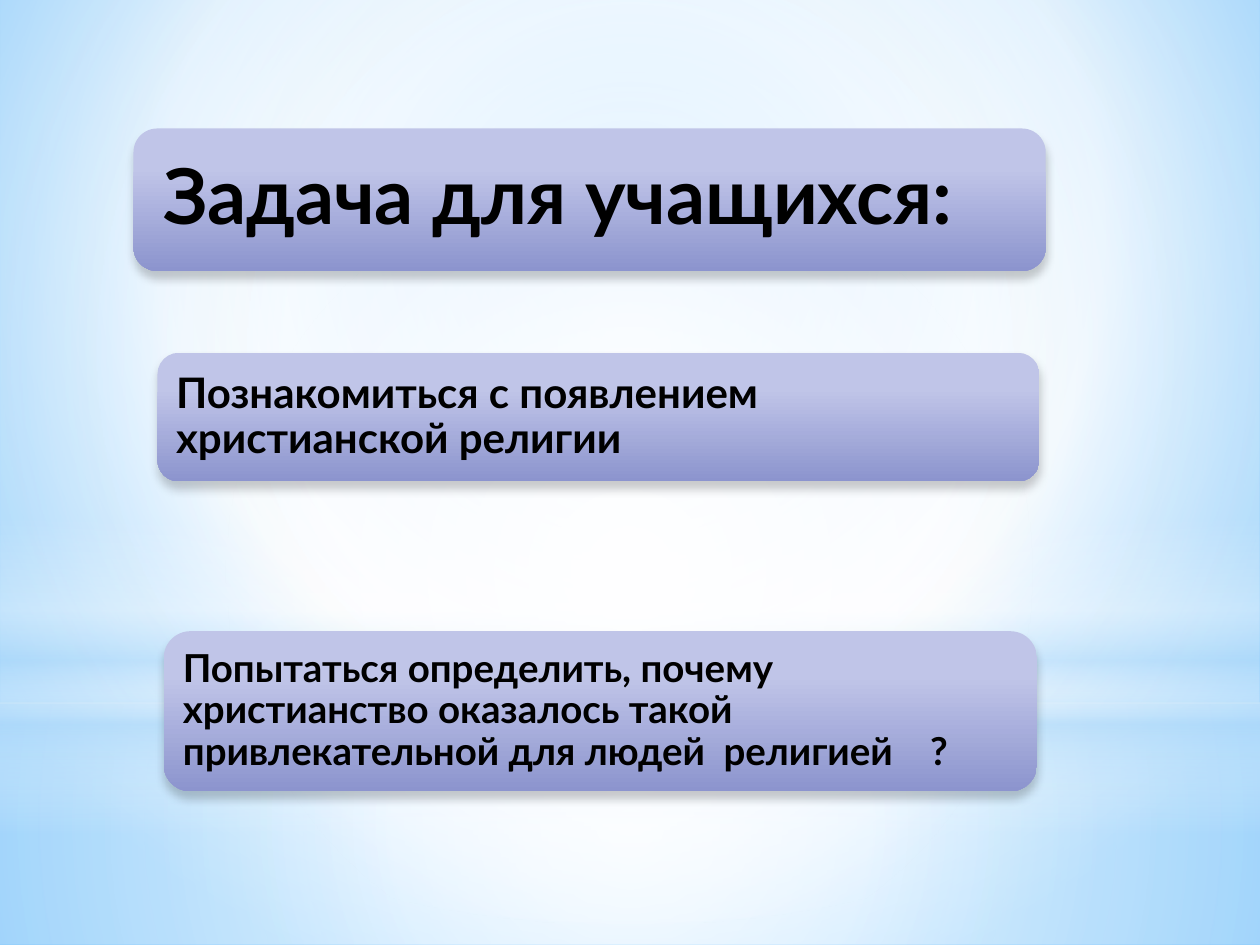
"""Build the slide that sets the pupils' tasks."""
from dataclasses import dataclass
from typing import Any

import lxml.etree
import pptx
import pptx.dml.color
import pptx.enum.shapes
import pptx.enum.text
import pptx.oxml.ns
import pptx.util

Inches = pptx.util.Inches
Shapes = pptx.enum.shapes.MSO_SHAPE
qn = pptx.oxml.ns.qn


@dataclass(frozen=True)
class Stop:
    position: int
    color: str
    opacity: int = 100


@dataclass(frozen=True)
class Gradient:
    stops: tuple[Stop, ...]
    focus: tuple[int, int, int, int] | None = None


@dataclass(frozen=True)
class Panel:
    preset: Any
    top: float
    height: float
    gradient: Gradient


@dataclass(frozen=True)
class Card:
    left: float
    top: float
    width: float
    height: float
    inset: float
    size: int
    text: str


@dataclass(frozen=True)
class Theme:
    font: str = "Lato"
    text: str = "000000"
    shadow: str = "000000"
    white: str = "FFFFFF"
    sky: str = "B4DCFA"
    sky_center: str = "9ED5FF"
    sky_edge: str = "5BB9FF"
    card_light: str = "C0C5E8"
    card_dark: str = "8C94CE"
    heading_size: int = 44
    task_size: int = 24
    long_task_size: int = 22


THEME = Theme()
WIDTH, HEIGHT = 10, 7.5
HORIZON = 5.58
CENTER = (50, 50, 50, 50)

BACKGROUND = Gradient(
    (Stop(0, THEME.sky_center), Stop(60, THEME.white), Stop(100, THEME.sky_edge)),
    (20, 10, 20, 60),
)
GROUND = Gradient(
    (Stop(0, THEME.white, 91), Stop(37, THEME.white, 76), Stop(100, THEME.sky, 79)), CENTER
)
SKY = Gradient(
    (Stop(0, THEME.white, 89), Stop(48, THEME.white, 62), Stop(100, THEME.sky, 79)), CENTER
)
HAZE = Gradient((
    Stop(0, THEME.white, 0),
    Stop(29, THEME.white, 30),
    Stop(45, THEME.sky, 40),
    Stop(55, THEME.white, 26),
    Stop(65, THEME.sky, 60),
    Stop(100, THEME.white, 0),
))
GLOW = Gradient((Stop(0, THEME.white), Stop(56, THEME.white, 0)), CENTER)
CARD_FILL = Gradient((Stop(28, THEME.card_light), Stop(100, THEME.card_dark)))

PANELS = (
    Panel(Shapes.RECTANGLE, HORIZON, HEIGHT - HORIZON, GROUND),
    Panel(Shapes.RECTANGLE, 0, HORIZON, SKY),
    Panel(Shapes.RECTANGLE, 4.12, 2.5, HAZE),
    Panel(Shapes.OVAL, 1.75, HORIZON, GLOW),
)
CARDS = (
    Card(1.06, 1.02, 7.24, 1.13, 0.18, THEME.heading_size, "Задача для учащихся:"),
    Card(1.25, 2.8, 7, 1.02, 0.1, THEME.task_size,
         "Познакомиться с появлением христианской религии"),
    Card(1.3, 5.01, 6.93, 1.27, 0.09, THEME.long_task_size,
         "Попытаться определить, почему христианство оказалось такой "
         "привлекательной для людей  религией    ?"),
)


def add_element(parent: Any, tag: str, **attributes: Any) -> Any:
    """Append a DrawingML element with the given attributes."""
    values = {name: str(value) for name, value in attributes.items()}
    return lxml.etree.SubElement(parent, qn(tag), values)


def add_color(parent: Any, color: str, opacity: int) -> None:
    """Append a colour with its opacity in percent."""
    element = add_element(parent, "a:srgbClr", val=color)
    if opacity < 100:
        add_element(element, "a:alpha", val=opacity * 1000)


def paint(properties: Any, fill: Any, gradient: Gradient) -> None:
    """Give the properties element a gradient fill."""
    fill.solid()
    solid = properties.find(qn("a:solidFill"))
    element = add_element(properties, "a:gradFill", rotWithShape=1)
    stops = add_element(element, "a:gsLst")
    for stop in gradient.stops:
        add_color(add_element(stops, "a:gs", pos=stop.position * 1000), stop.color, stop.opacity)
    if gradient.focus:
        sides = {side: value * 1000 for side, value in zip("ltrb", gradient.focus)}
        add_element(add_element(element, "a:path", path="circle"), "a:fillToRect", **sides)
    else:
        add_element(element, "a:lin", ang=90 * 60000, scaled=0)
    properties.replace(solid, element)


def add_filled_shape(slide: Any, preset: Any, box: tuple[float, ...], gradient: Gradient) -> Any:
    """Add an outline-free shape with a gradient and no shadow."""
    shape = slide.shapes.add_shape(preset, *map(Inches, box))
    shape.line.fill.background()
    shape.shadow.inherit = False
    paint(shape.element.spPr, shape.fill, gradient)
    return shape


def add_card(slide: Any, card: Card) -> None:
    """Add a rounded card with a soft shadow and bold text."""
    box = (card.left, card.top, card.width, card.height)
    shape = add_filled_shape(slide, Shapes.ROUNDED_RECTANGLE, box, CARD_FILL)
    shadow = add_element(
        shape.element.spPr.find(qn("a:effectLst")), "a:outerShdw",
        blurRad=pptx.util.Pt(5), dist=pptx.util.Pt(4), dir=90 * 60000, rotWithShape=0,
    )
    add_color(shadow, THEME.shadow, 20)
    frame = shape.text_frame
    frame.word_wrap = True
    frame.vertical_anchor = pptx.enum.text.MSO_ANCHOR.MIDDLE
    frame.margin_left = frame.margin_right = Inches(card.inset)
    frame.margin_top = frame.margin_bottom = Inches(card.inset)
    paragraph = frame.paragraphs[0]
    paragraph.text = card.text
    paragraph.alignment = pptx.enum.text.PP_ALIGN.LEFT
    paragraph.line_spacing = 0.9
    paragraph.font.name = THEME.font
    paragraph.font.size = pptx.util.Pt(card.size)
    paragraph.font.bold = True
    paragraph.font.color.rgb = pptx.dml.color.RGBColor.from_string(THEME.text)


def main() -> None:
    """Build and save the presentation."""
    presentation = pptx.Presentation()
    presentation.slide_width, presentation.slide_height = Inches(WIDTH), Inches(HEIGHT)
    slide = presentation.slides.add_slide(presentation.slide_layouts[6])
    fill = slide.background.fill
    paint(slide.element.find(".//" + qn("p:bgPr")), fill, BACKGROUND)
    for panel in PANELS:
        add_filled_shape(slide, panel.preset, (0, panel.top, WIDTH, panel.height), panel.gradient)
    for card in CARDS:
        add_card(slide, card)
    presentation.save("out.pptx")


if __name__ == "__main__":
    main()
